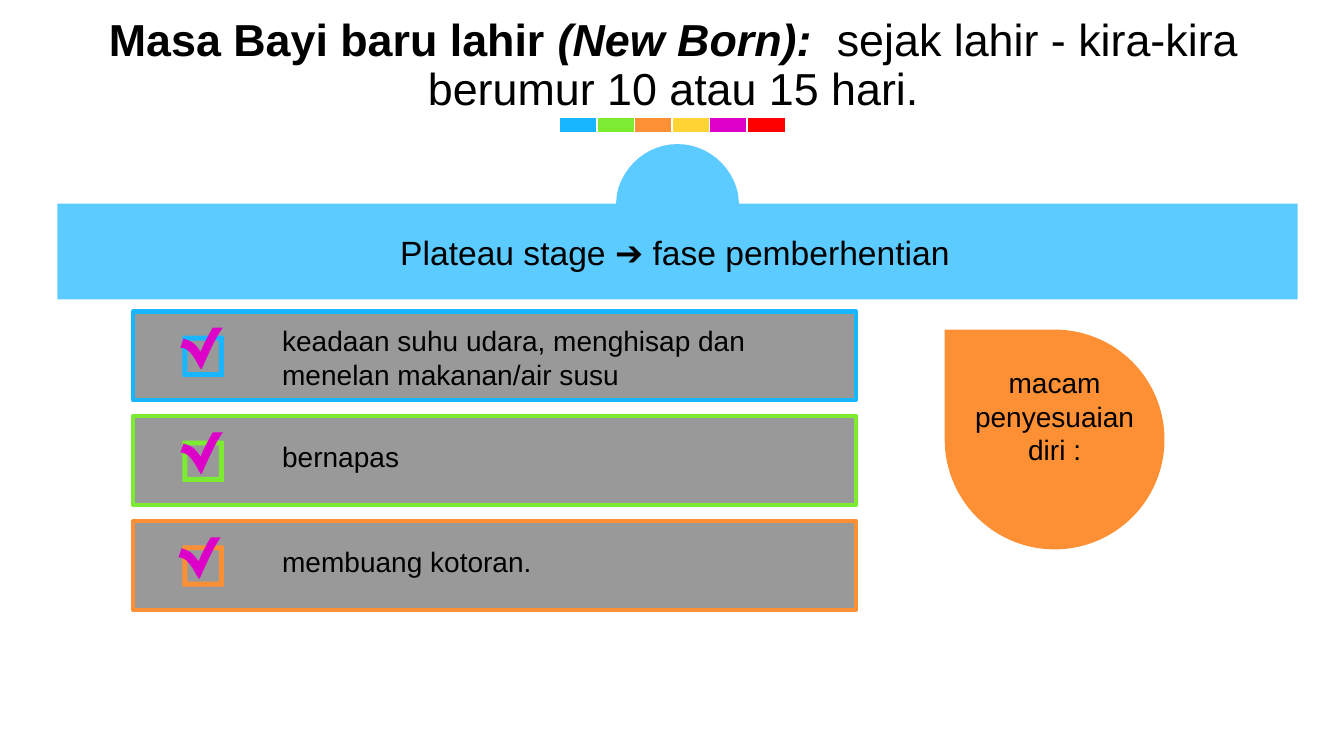
from pptx import Presentation
from pptx.dml.color import RGBColor
from pptx.enum.shapes import MSO_SHAPE
from pptx.enum.text import MSO_ANCHOR, MSO_AUTO_SIZE, PP_ALIGN
from pptx.oxml.ns import qn
from pptx.oxml.xmlchemy import OxmlElement
from pptx.util import Inches, Pt

COLORS = {
    "blue": "17B6FF", "green": "7CEC32", "orange": "FD9034", "yellow": "FFD434",
    "magenta": "DC00C8", "red": "FF0000", "black": "000000", "white": "FFFFFF",
}
FONT = "Arial"

# text, bold, italic
TITLE = [
    ("Masa Bayi baru lahir ", True, False),
    ("(New Born):  ", True, True),
    ("sejak lahir - kira-kira berumur 10 atau 15 hari.", False, False),
]
STRIP = ["blue", "green", "orange", "yellow", "magenta", "red"]
BANNER_TEXT = "Plateau stage ➔ fase pemberhentian"
DROP_TEXT = "macam penyesuaian diri :"
# text, colour, text offset from the row top, text height, check mark left
ROWS = [
    ("keadaan suhu udara, menghisap dan menelan makanan/air susu", "blue", 0.07, 0.77, 1.79),
    ("bernapas", "green", 0.18, 0.44, 1.79),
    ("membuang kotoran.", "orange", 0.18, 0.44, 1.77),
]
ROW_LEFT, ROW_TOP, ROW_WIDTH, ROW_HEIGHT, ROW_PITCH = 1.32, 3.09, 7.17, 0.88, 1.04

# Outlines: a pair is a line end, three pairs are a Bézier curve
CHECK = [
    (0.32, 0), (0.42, 0),
    ((0.34, 0.11), (0.27, 0.28), (0.21, 0.41)), (0.2, 0.41),
    ((0.15, 0.33), (0.1, 0.2), (0, 0.2)), (0.03, 0.11),
    ((0.13, 0.14), (0.15, 0.17), (0.2, 0.24)),
    ((0.24, 0.14), (0.27, 0.09), (0.32, 0)),
]
BANNER = [
    (6.15, 0),
    ((6.44, 0), (6.69, 0.21), (6.75, 0.49)), (6.76, 0.59),
    (12.3, 0.59), (12.3, 1.54), (0, 1.54), (0, 0.59), (5.54, 0.59), (5.55, 0.49),
    ((5.61, 0.21), (5.86, 0), (6.15, 0)),
]


def rgb(name):
    return RGBColor.from_string(COLORS[name])


def paint(shape, fill, opacity=100, line=None, line_width=1):
    shape.shadow.inherit = False
    shape.fill.solid()
    shape.fill.fore_color.rgb = rgb(fill)
    if opacity < 100:
        alpha = OxmlElement("a:alpha")
        alpha.set("val", str(opacity * 1000))
        shape.element.spPr.find(qn("a:solidFill")).find(qn("a:srgbClr")).append(alpha)
    if line:
        shape.line.color.rgb = rgb(line)
        shape.line.width = Pt(line_width)
    else:
        shape.line.fill.background()


def add_preset(slide, kind, left, top, width, height, fill, **style):
    shape = slide.shapes.add_shape(kind, Inches(left), Inches(top), Inches(width), Inches(height))
    paint(shape, fill, **style)
    return shape


def flatten(outline, steps=12):
    """Turn lines and Bézier curves into a list of points."""
    points = [outline[0]]
    for part in outline[1:]:
        if len(part) == 2:
            points.append(part)
            continue
        corners = (points[-1], *part)
        for step in range(1, steps + 1):
            t = step / steps
            weights = ((1 - t) ** 3, 3 * t * (1 - t) ** 2, 3 * t * t * (1 - t), t ** 3)
            points.append(tuple(
                sum(weight * corner[axis] for weight, corner in zip(weights, corners))
                for axis in (0, 1)))
    return points


def add_outline(slide, outline, left, top, fill, opacity=100):
    points = [(Inches(left + x), Inches(top + y)) for x, y in flatten(outline)]
    builder = slide.shapes.build_freeform(*points[0])
    builder.add_line_segments(points[1:], close=True)
    paint(builder.convert_to_shape(), fill, opacity)


def style_span(span, size, bold=False, italic=False):
    span.font.name = FONT
    span.font.size = Pt(size)
    span.font.color.rgb = rgb("black")
    span.font.bold = bold
    span.font.italic = italic


def add_text(slide, text, left, top, width, height, size=20,
             align=PP_ALIGN.LEFT, anchor=MSO_ANCHOR.TOP):
    box = slide.shapes.add_textbox(Inches(left), Inches(top), Inches(width), Inches(height))
    frame = box.text_frame
    frame.word_wrap = True
    frame.vertical_anchor = anchor
    frame.text = text
    para = frame.paragraphs[0]
    para.alignment = align
    style_span(para.runs[0], size)


def add_title(slide):
    title = slide.shapes.title
    title.left, title.top = Inches(0.35), Inches(0.24)
    title.width, title.height = Inches(12.66), Inches(0.79)
    frame = title.text_frame
    frame.auto_size = MSO_AUTO_SIZE.NONE
    frame.word_wrap = True
    frame.vertical_anchor = MSO_ANCHOR.MIDDLE
    frame.margin_left = frame.margin_right = frame.margin_top = Inches(0.1)
    frame.margin_bottom = Inches(0.05)
    para = frame.paragraphs[0]
    para.alignment = PP_ALIGN.CENTER
    para.line_spacing = 0.9
    para.space_before = Pt(10)
    for text, bold, italic in TITLE:
        span = para.add_run()
        span.text = text
        style_span(span, 32, bold, italic)


def add_row(slide, index, text, color, text_drop, text_height, check_left):
    top = ROW_TOP + index * ROW_PITCH
    add_preset(slide, MSO_SHAPE.RECTANGLE, ROW_LEFT, top, ROW_WIDTH, ROW_HEIGHT,
               "black", opacity=40, line=color, line_width=3)
    tick_box = add_preset(slide, MSO_SHAPE.FRAME, 1.81, top + 0.24, 0.41, 0.41, color)
    tick_box.adjustments[0] = 0.12
    add_outline(slide, CHECK, check_left, top + 0.16, "magenta")
    add_text(slide, text, 2.7, top + text_drop, 5.45, text_height)


def main():
    deck = Presentation()
    deck.slide_width, deck.slide_height = Inches(13.33), Inches(7.5)
    slide = deck.slides.add_slide(deck.slide_layouts[5])

    add_title(slide)
    for index, color in enumerate(STRIP):
        add_preset(slide, MSO_SHAPE.RECTANGLE, 5.55 + index * 2.23 / len(STRIP), 1.16,
                   0.38, 0.16, color, line="white")

    teardrop = add_preset(slide, MSO_SHAPE.TEAR, 9.37, 3.27, 2.18, 2.18, "orange")
    teardrop.element.spPr.xfrm.set("flipH", "1")
    add_text(slide, DROP_TEXT, 9.55, 3.57, 1.82, 1.11,
             align=PP_ALIGN.CENTER, anchor=MSO_ANCHOR.MIDDLE)

    for index, row in enumerate(ROWS):
        add_row(slide, index, *row)

    add_outline(slide, BANNER, 0.57, 1.43, "blue", opacity=70)
    add_text(slide, BANNER_TEXT, 2.81, 2.25, 7.77, 0.5, size=24, align=PP_ALIGN.CENTER)

    deck.save("out.pptx")


if __name__ == "__main__":
    main()
